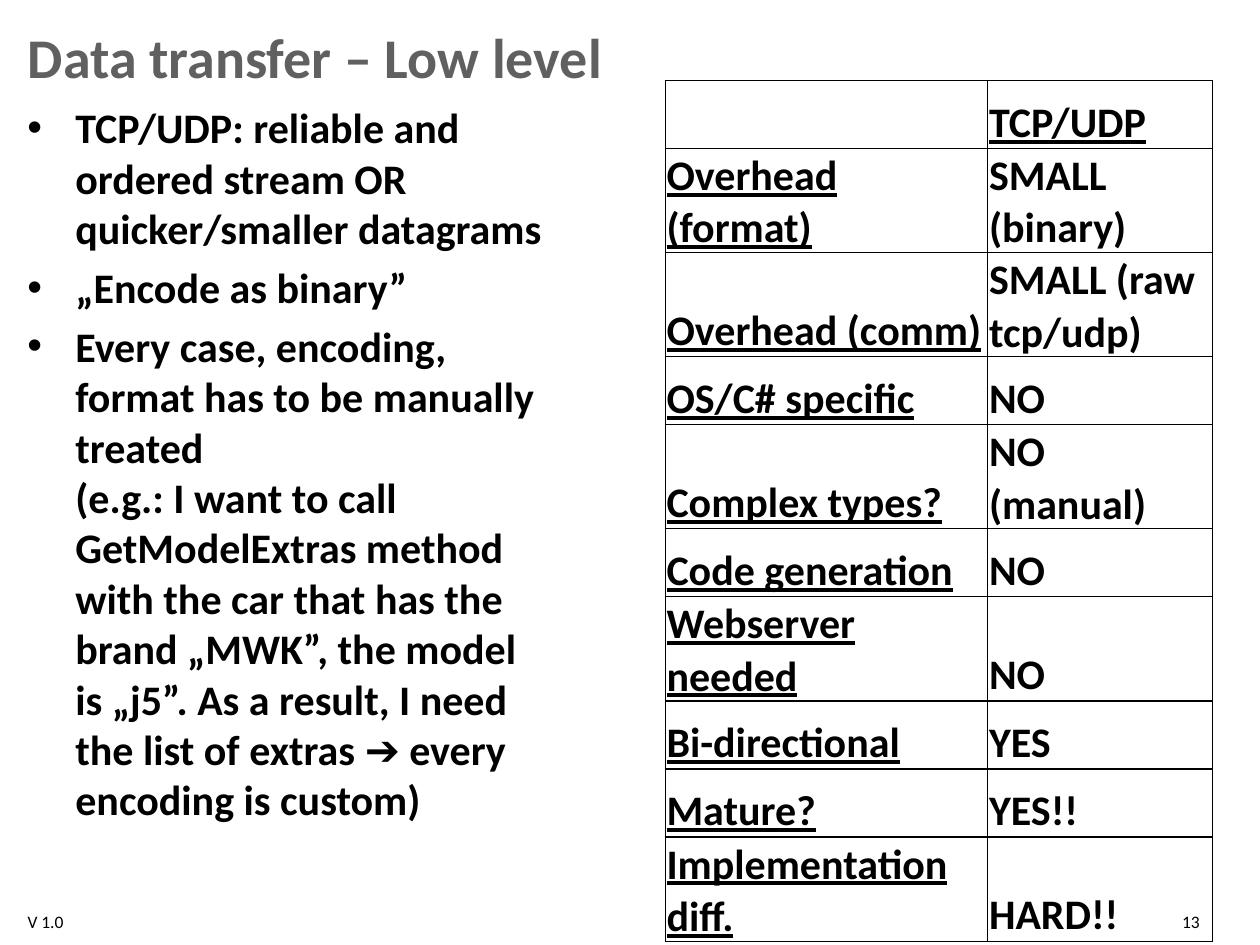
from pptx import Presentation, oxml
from pptx import util as u
from pptx.dml.color import RGBColor
from pptx.enum import text
from pptx.oxml.ns import nsdecls

FACE = "Calibri"
INK = "000000"
POINTS = [
    "TCP/UDP: reliable and ordered stream OR quicker/smaller datagrams",
    "„Encode as binary”",
    "Every case, encoding, format has to be manually treated\v"
    "(e.g.: I want to call GetModelExtras method with the car that has "
    "the brand „MWK”, the model is „j5”. As a result, I need the list of "
    "extras ➔ every encoding is custom)",
]
ROWS = [
    ("", "TCP/UDP"),
    ("Overhead (format)", "SMALL (binary)"),
    ("Overhead (comm)", "SMALL (raw tcp/udp)"),
    ("OS/C# specific", "NO"),
    ("Complex types?", "NO (manual)"),
    ("Code generation", "NO"),
    ("Webserver needed", "NO"),
    ("Bi-directional", "YES"),
    ("Mature?", "YES!!"),
    ("Implementation diff.", "HARD!!"),
]


def px(n):
    return u.Emu(n * 9144)


def color(code):
    return RGBColor.from_string(code)


def style(para, size, bold=False, line=False, ink=INK):
    for run in para.runs:
        font = run.font
        font.name = FACE
        font.size = u.Pt(size)
        font.bold = bold
        font.underline = line
        font.color.rgb = color(ink)


def add_title(slide, box, words):
    title = slide.shapes.title
    title.left, title.top, title.width, title.height = map(px, box)
    frame = title.text_frame
    frame.text = words
    frame.vertical_anchor = text.MSO_ANCHOR.MIDDLE
    para = frame.paragraphs[0]
    para.alignment = text.PP_ALIGN.LEFT
    style(para, 32, bold=True, ink="606060")


def add_text(slide, box):
    frame = slide.shapes.add_textbox(*map(px, box)).text_frame
    frame.word_wrap = True
    return frame


def add_list(slide, box, points):
    frame = add_text(slide, box)
    frame.text = "\n".join(points)
    for i, para in enumerate(frame.paragraphs):
        props = para._p.get_or_add_pPr()
        props.set("marL", str(px(38)))
        props.set("indent", str(-px(38)))
        props.append(oxml.parse_xml(f'<a:buFont {nsdecls("a")} typeface="Arial"/>'))
        props.append(oxml.parse_xml(f'<a:buChar {nsdecls("a")} char="•"/>'))
        if i:
            para.space_before = u.Pt(4.8)
        style(para, 24, bold=True)


def add_edges(cell):
    props = cell._tc.get_or_add_tcPr()
    for side in "LRTB":
        props.append(oxml.parse_xml(
            f'<a:ln{side} {nsdecls("a")} w="9525"><a:solidFill>'
            f'<a:srgbClr val="{INK}"/></a:solidFill></a:ln{side}>'))


def add_grid(slide, box, rows, widths):
    table = slide.shapes.add_table(len(rows), len(widths), *map(px, box)).table
    table.first_row = table.horz_banding = False
    for col, width in zip(table.columns, widths):
        col.width = px(width)
    for r, row in enumerate(rows):
        table.rows[r].height = px(box[3] // len(rows))
        for c, words in enumerate(row):
            cell = table.cell(r, c)
            cell.text = words
            cell.vertical_anchor = text.MSO_ANCHOR.BOTTOM
            cell.margin_left = cell.margin_right = cell.margin_top = px(1)
            cell.margin_bottom = 0
            add_edges(cell)
            cell.fill.background()
            para = cell.text_frame.paragraphs[0]
            para.line_spacing = 1.02
            style(para, 24, bold=True, line=r == 0 or c == 0)


def add_note(slide, box, words, align):
    frame = add_text(slide, box)
    frame.text = words
    para = frame.paragraphs[0]
    para.alignment = align
    style(para, 10)


def main():
    deck = Presentation()
    deck.slide_width, deck.slide_height = px(1000), px(750)
    slide = deck.slides.add_slide(deck.slide_layouts[5])
    add_note(slide, (12, 718, 79, 20), "V 1.0", text.PP_ALIGN.LEFT)
    add_title(slide, (12, 13, 976, 63), "Data transfer – Low level")
    add_list(slide, (12, 76, 433, 630), POINTS)
    add_grid(slide, (528, 64, 434, 540), ROWS, (256, 178))
    add_note(slide, (831, 718, 131, 20), "13", text.PP_ALIGN.RIGHT)
    deck.save("out.pptx")


if __name__ == "__main__":
    main()
